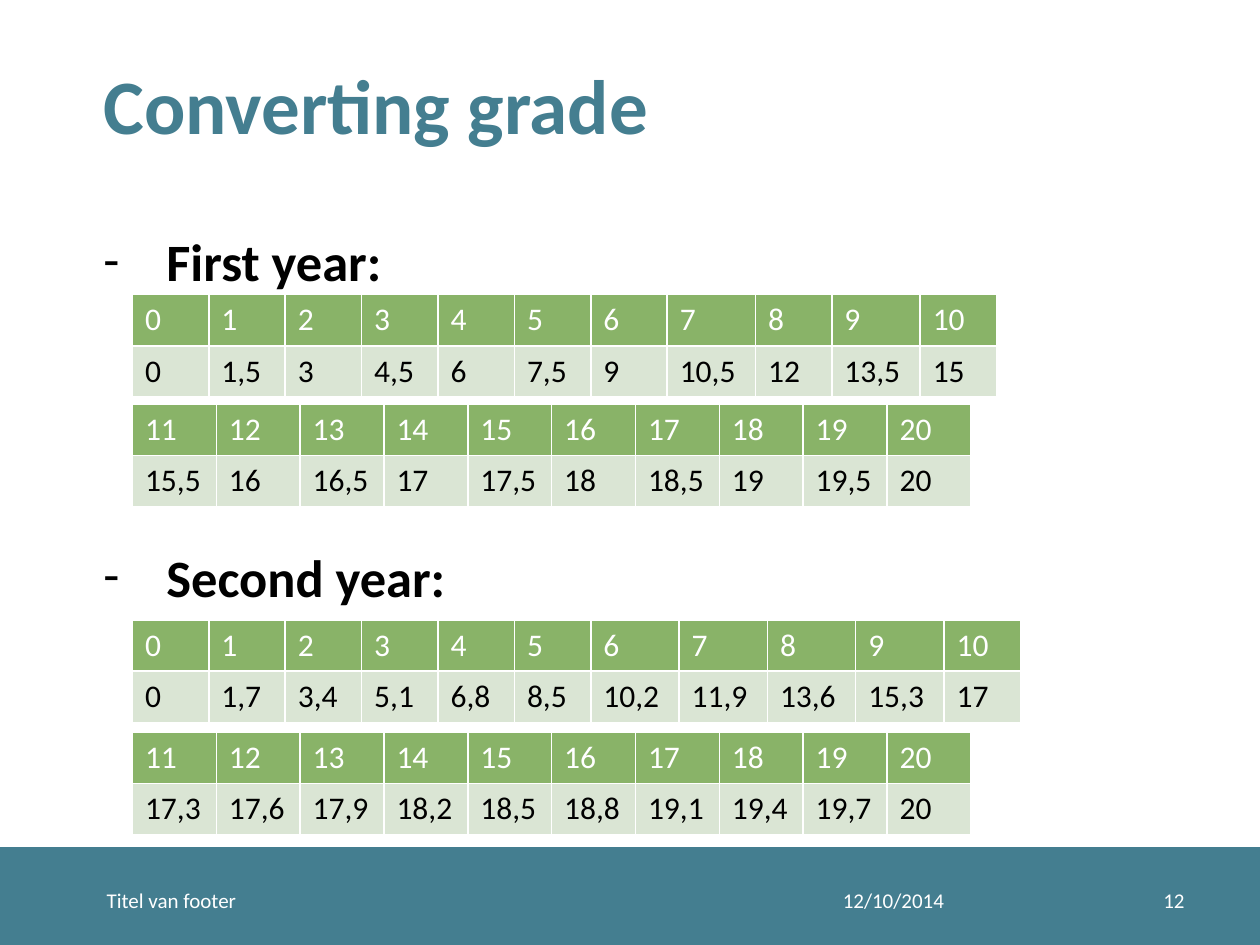
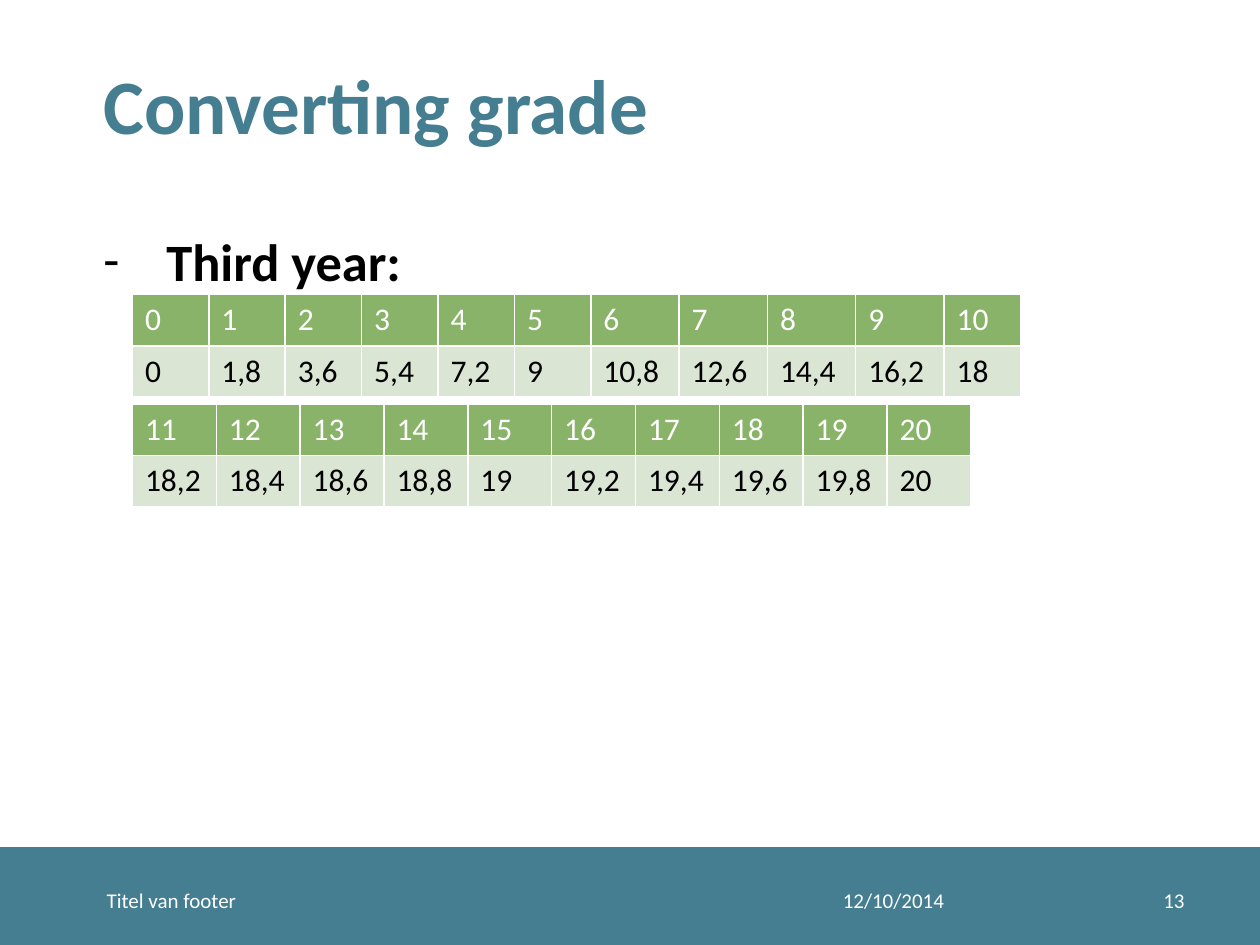
import pptx
import pptx.dml.color
import pptx.enum.shapes
import pptx.enum.text
import pptx.oxml
import pptx.oxml.ns
import pptx.util

Cm = pptx.util.Cm
Pt = pptx.util.Pt
ALIGN = pptx.enum.text.PP_ALIGN
MIDDLE = pptx.enum.text.MSO_ANCHOR.MIDDLE

FONT = "Calibri"
TEAL = "447E90"
GREEN = "89B368"
PALE_GREEN = "DAE5D4"
WHITE = "FFFFFF"
BLACK = "000000"

TITLE_BOX = (1.83, 0.51, 22.3, 3.18)
BODY_BOX = (1.83, 4.24, 22.3, 12.57)
BAND_BOX = (0, 17.12, 25.4, 1.93)
TABLE_LEFT = 2.67
ROW_HEIGHT = 1.03
NARROW, WIDE, EVEN = 1.54, 1.78, 1.69


def color(hex_code):
    return pptx.dml.color.RGBColor.from_string(hex_code)


def place(shape, box):
    shape.left, shape.top, shape.width, shape.height = map(Cm, box)


def write(para, text, size=18, ink=BLACK, bold=False, align=ALIGN.LEFT):
    para.alignment = align
    span = para.add_run()
    span.text = text
    span.font.name = FONT
    span.font.size = Pt(size)
    span.font.bold = bold
    span.font.color.rgb = color(ink)


def add_title(page, text):
    title = page.shapes.title
    place(title, TITLE_BOX)
    title.text_frame.vertical_anchor = MIDDLE
    title.text_frame.auto_size = pptx.enum.text.MSO_AUTO_SIZE.NONE
    write(title.text_frame.paragraphs[0], text, size=44, ink=TEAL, bold=True)


def set_dash(para):
    properties = para._p.get_or_add_pPr()
    properties.set("marL", str(Cm(1.27)))
    properties.set("indent", str(Cm(-1.27)))
    namespace = pptx.oxml.ns.nsdecls("a")
    for markup in (f'<a:buFont {namespace} typeface="{FONT}"/>',
                   f'<a:buChar {namespace} char="-"/>'):
        properties.append(pptx.oxml.parse_xml(markup))


def add_year_list(page, names):
    body = page.placeholders[1]
    place(body, BODY_BOX)
    frame = body.text_frame
    frame.auto_size = pptx.enum.text.MSO_AUTO_SIZE.NONE
    for index, name in enumerate(names):
        para = frame.add_paragraph() if index else frame.paragraphs[0]
        para.line_spacing = 1.2
        if index:
            para.space_before = Pt(137)
        set_dash(para)
        write(para, name, size=30, bold=True)


def add_footer(page, number):
    left, top, width, height = BAND_BOX
    band = page.shapes.add_shape(pptx.enum.shapes.MSO_SHAPE.RECTANGLE,
                                 *map(Cm, BAND_BOX))
    band.shadow.inherit = False
    band.fill.solid()
    band.fill.fore_color.rgb = color(TEAL)
    band.line.color.rgb = color(TEAL)
    band.line.width = Pt(2)
    for offset, span_width, text, align in (
            (16.74, 5.92, "12/10/2014", ALIGN.LEFT),
            (1.9, 14.71, "Titel van footer", ALIGN.LEFT),
            (22.66, 1.47, str(number), ALIGN.RIGHT)):
        box = page.shapes.add_textbox(Cm(left + offset), Cm(top + 0.51),
                                      Cm(span_width), Cm(1.02))
        box.text_frame.word_wrap = True
        box.text_frame.vertical_anchor = MIDDLE
        write(box.text_frame.paragraphs[0], text, size=12, ink=WHITE, align=align)


def convert(grade, factor):
    if grade <= 10:
        result = grade * factor
    else:
        result = 10 * factor + (grade - 10) * (2 - factor)
    return f"{round(result, 1):g}".replace(".", ",")


def add_grade_table(page, top, grades, factor, even=False):
    results = [convert(grade, factor) for grade in grades]
    widths = [EVEN if even else WIDE if len(result) == 4 else NARROW
              for result in results]
    table = page.shapes.add_table(2, len(widths), Cm(TABLE_LEFT), Cm(top),
                                  Cm(sum(widths)), Cm(2 * ROW_HEIGHT)).table
    for column, width in zip(table.columns, widths):
        column.width = Cm(width)
    rows = ((map(str, grades), GREEN, WHITE), (results, PALE_GREEN, BLACK))
    for row, (texts, fill, ink) in enumerate(rows):
        for column, text in enumerate(texts):
            cell = table.cell(row, column)
            cell.fill.solid()
            cell.fill.fore_color.rgb = color(fill)
            write(cell.text_frame.paragraphs[0], text, ink=ink)


def add_grade_page(deck, number, years):
    page = deck.slides.add_slide(deck.slide_layouts[1])
    add_title(page, "Converting grade")
    add_year_list(page, [name for name, *_ in years])
    add_footer(page, number)
    for _, factor, low_top, high_top in years:
        add_grade_table(page, low_top, range(11), factor)
        add_grade_table(page, high_top, range(11, 21), factor, even=True)


def main():
    deck = pptx.Presentation()
    deck.slide_width, deck.slide_height = Cm(25.4), Cm(19.05)
    add_grade_page(deck, 12, [("First year:", 1.5, 5.94, 8.15),
                              ("Second year:", 1.7, 12.5, 14.76)])
    add_grade_page(deck, 13, [("Third year:", 1.8, 5.94, 8.15)])
    deck.save("out.pptx")


if __name__ == "__main__":
    main()
